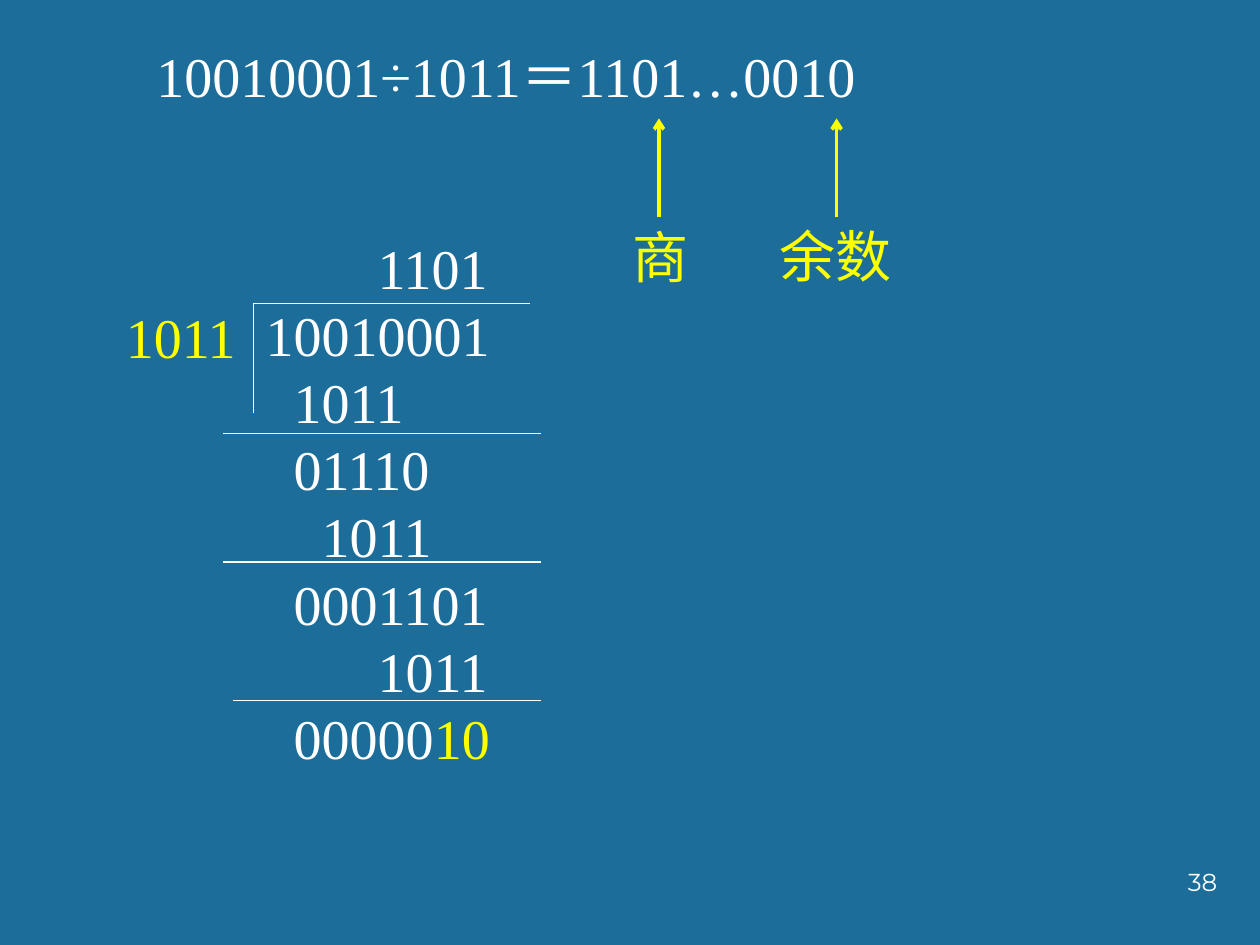
"""Build a slide showing binary long division with quotient and remainder."""
from lxml import etree
from pptx import Presentation
from pptx import util as u
from pptx.dml import color
from pptx.enum import shapes, text
from pptx.oxml import ns

COLORS = {"back": "1C6D9A", "white": "FFFFFF", "yellow": "FFFF00"}
SERIF, CHINESE, SANS = "Times New Roman", "Noto Sans CJK SC", "Montserrat"
DIGIT = u.Pt(16)


def write(box, lines, font=SERIF, size=32, hue="white", align="LEFT", wrap=False, pitch=None):
    """Fill a box with lines, each an indent in digits and a list of (text, hue) spans."""
    frame = box.text_frame
    frame.word_wrap = wrap
    frame.auto_size = text.MSO_AUTO_SIZE.NONE
    frame.vertical_anchor = text.MSO_ANCHOR.TOP
    for index, (indent, spans) in enumerate(lines):
        para = frame.add_paragraph() if index else frame.paragraphs[0]
        para.alignment = getattr(text.PP_ALIGN, align)
        if pitch:
            para.line_spacing = u.Pt(pitch)
        if indent:
            properties = para._p.get_or_add_pPr()
            properties.set("marL", str(int(indent * DIGIT)))
            properties.set("indent", "0")
        for words, span_hue in spans:
            span = para.add_run()
            span.text = words
            span.font.name, span.font.size = font, u.Pt(size)
            span.font.color.rgb = color.RGBColor.from_string(COLORS[span_hue or hue])
            if font == CHINESE:
                etree.SubElement(span._r.get_or_add_rPr(), ns.qn("a:ea"), typeface=font)


def draw_line(x1, y1, x2, y2, hue="white", width=0.75, arrow=False):
    """Draw a straight line, with an arrowhead at its end if wanted."""
    line = page.shapes.add_connector(
        shapes.MSO_CONNECTOR.STRAIGHT, *(u.Inches(n) for n in (x1, y1, x2, y2)))
    line.line.color.rgb = color.RGBColor.from_string(COLORS[hue])
    line.line.width = u.Pt(width)
    if arrow:
        etree.SubElement(line.line._get_or_add_ln(), ns.qn("a:tailEnd"), type="arrow")
    etree.SubElement(line._element.spPr, ns.qn("a:effectLst"))


deck = Presentation()
deck.slide_width, deck.slide_height = u.Inches(10), u.Inches(7.5)
page = deck.slides.add_slide(deck.slide_layouts[5])
page.background.fill.solid()
page.background.fill.fore_color.rgb = color.RGBColor.from_string(COLORS["back"])

title = page.shapes.title
title.left, title.top, title.width, title.height = (u.Inches(n) for n in (1.14, 0.28, 5.98, 0.63))
write(title, [(0, [("10010001÷1011＝1101…0010", None)])], pitch=38.4)

division = [
    (4, [("1101", None)]),
    (0, [("10010001", None)]),
    (1, [("1011", None)]),
    (1, [("01110", None)]),
    (2, [("1011", None)]),
    (1, [("0001101", None)]),
    (4, [("1011", None)]),
    (1, [("00000", None), ("10", "yellow")]),
]
boxes = [
    ((2.01, 1.8, 2.05, 4.41), division, dict(wrap=True, pitch=38.4)),
    ((0.9, 2.35, 1.09, 0.63), [(0, [("1011", None)])], dict(hue="yellow", pitch=38.4)),
    ((4.92, 1.72, 0.65, 0.64), [(0, [("商", None)])], dict(font=CHINESE, hue="yellow")),
    ((6.09, 1.71, 1.1, 0.64), [(0, [("余数", None)])], dict(font=CHINESE, hue="yellow")),
    ((7.68, 6.83, 2.08, 0.5), [(0, [("38", None)])],
     dict(font=SANS, size=14, align="RIGHT", wrap=True)),
]
for place, lines, style in boxes:
    write(page.shapes.add_textbox(*(u.Inches(n) for n in place)), lines, **style)

draw_line(2.01, 2.41, 4.21, 2.41)
draw_line(2.01, 2.41, 2.01, 3.28)
for left, y in ((1.77, 3.44), (1.77, 4.46), (1.85, 5.56)):
    draw_line(left, y, 4.29, y)
for x in (5.23, 6.64):
    draw_line(x, 1.72, x, 0.94, hue="yellow", width=2, arrow=True)

deck.save("out.pptx")
